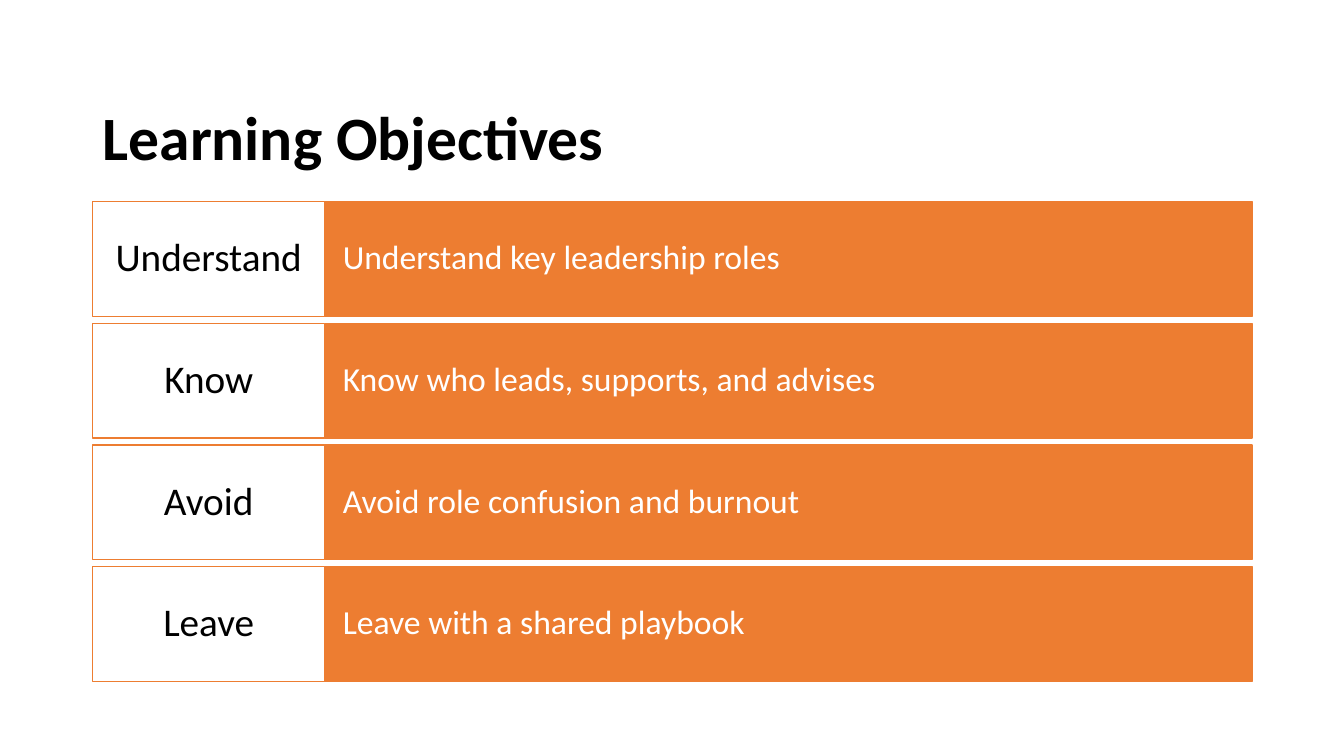
from dataclasses import dataclass

from pptx import Presentation
from pptx.dml.color import RGBColor
from pptx.enum import shapes, text
from pptx.shapes.autoshape import Shape
from pptx.slide import Slide
from pptx.util import Inches, Pt

ORANGE = RGBColor(0xED, 0x7D, 0x31)
WHITE = RGBColor(0xFF, 0xFF, 0xFF)
BLACK = RGBColor(0x00, 0x00, 0x00)

LEFT = 0.92
VERB_WIDTH = 2.3
GOAL_WIDTH = 9.2
FIRST_TOP = 2.0
LAST_TOP = 5.62
ROW_HEIGHT = 1.14


@dataclass(frozen=True)
class Objective:
    verb: str
    goal: str


@dataclass(frozen=True)
class CellStyle:
    left: float
    width: float
    fill: RGBColor
    color: RGBColor
    size: int
    align: text.PP_ALIGN
    side_inset: float
    end_inset: float


OBJECTIVES = [
    Objective("Understand", "Understand key leadership roles"),
    Objective("Know", "Know who leads, supports, and advises"),
    Objective("Avoid", "Avoid role confusion and burnout"),
    Objective("Leave", "Leave with a shared playbook"),
]

GOAL = CellStyle(LEFT + VERB_WIDTH, GOAL_WIDTH, ORANGE, WHITE, 24,
                 text.PP_ALIGN.LEFT, 0.18, 0.29)
VERB = CellStyle(LEFT, VERB_WIDTH, WHITE, BLACK, 28,
                 text.PP_ALIGN.CENTER, 0.12, 0.11)


def write(box: Shape, wording: str, size: int, color: RGBColor,
          align: text.PP_ALIGN, bold: bool = False) -> None:
    frame = box.text_frame
    frame.word_wrap = True
    frame.vertical_anchor = text.MSO_ANCHOR.MIDDLE
    para = frame.paragraphs[0]
    para.text = wording
    para.alignment = align
    para.line_spacing = 0.9
    para.font.name = "Calibri"
    para.font.size = Pt(size)
    para.font.bold = bold
    para.font.color.rgb = color


def add_title(page: Slide, wording: str) -> None:
    box = page.shapes.add_textbox(Inches(LEFT), Inches(0.93),
                                  Inches(VERB_WIDTH + GOAL_WIDTH), Inches(0.92))
    write(box, wording, 44, BLACK, text.PP_ALIGN.LEFT, bold=True)


def add_cell(page: Slide, wording: str, top: float, style: CellStyle) -> None:
    box = page.shapes.add_shape(shapes.MSO_SHAPE.RECTANGLE,
                                Inches(style.left), Inches(top),
                                Inches(style.width), Inches(ROW_HEIGHT))
    box.shadow.inherit = False
    box.fill.solid()
    box.fill.fore_color.rgb = style.fill
    box.line.color.rgb = ORANGE
    box.line.width = Pt(1)
    frame = box.text_frame
    frame.margin_left = frame.margin_right = Inches(style.side_inset)
    frame.margin_top = frame.margin_bottom = Inches(style.end_inset)
    write(box, wording, style.size, style.color, style.align)


def main() -> None:
    deck = Presentation()
    deck.slide_width = Inches(13.33)
    deck.slide_height = Inches(7.5)
    page = deck.slides.add_slide(deck.slide_layouts[6])
    add_title(page, "Learning Objectives")
    pitch = (LAST_TOP - FIRST_TOP) / (len(OBJECTIVES) - 1)
    for row, objective in enumerate(OBJECTIVES):
        top = FIRST_TOP + row * pitch
        add_cell(page, objective.goal, top, GOAL)
        add_cell(page, objective.verb, top, VERB)
    deck.save("out.pptx")


if __name__ == "__main__":
    main()
